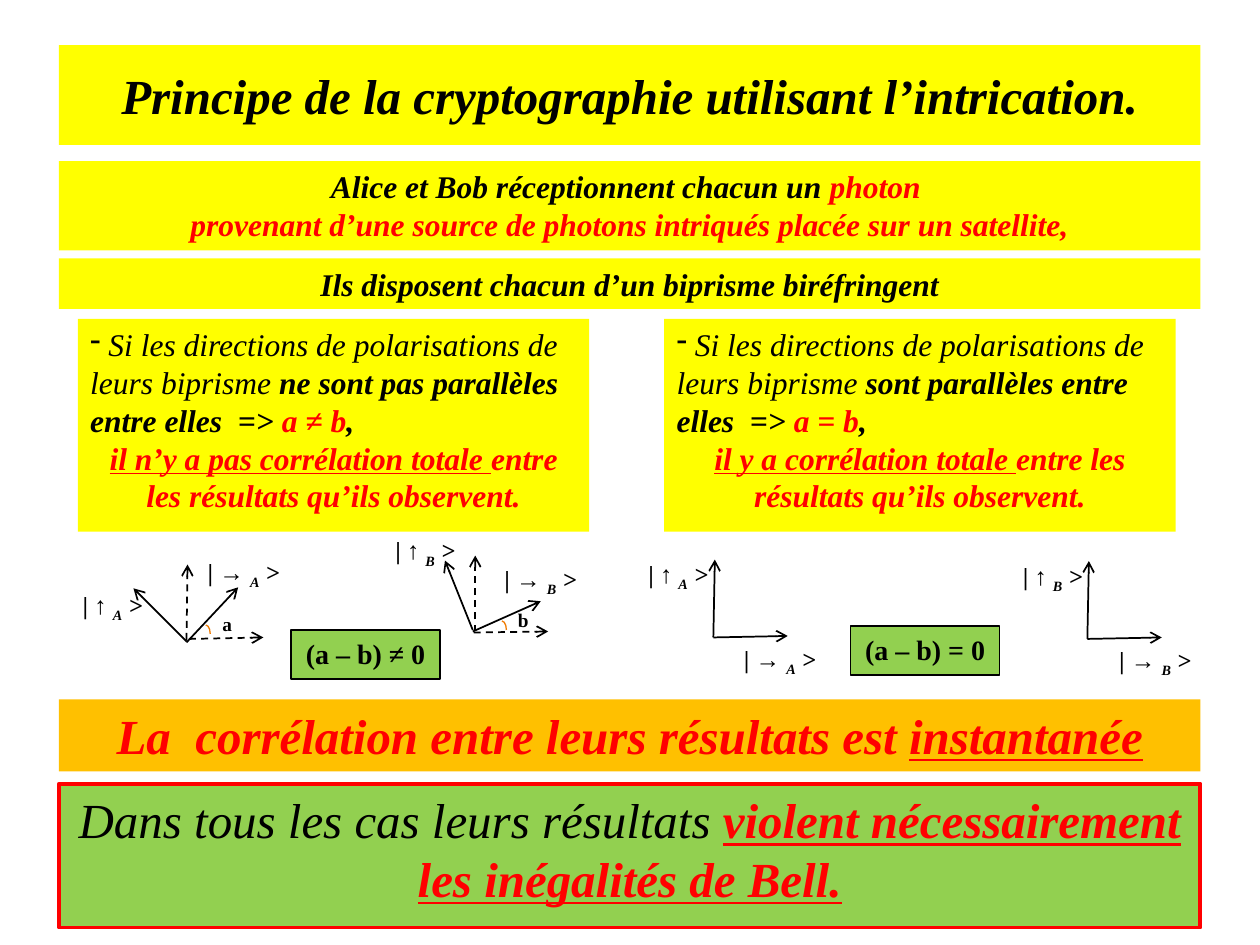
from lxml import etree
from pptx import Presentation
from pptx.dml.color import RGBColor
from pptx.enum.dml import MSO_LINE
from pptx.enum.shapes import MSO_CONNECTOR, MSO_SHAPE
from pptx.enum.text import MSO_ANCHOR, PP_ALIGN
from pptx.oxml.ns import qn
from pptx.util import Cm, Pt

RECTANGLE, ARC = MSO_SHAPE.RECTANGLE, MSO_SHAPE.ARC
STRAIGHT, DASH = MSO_CONNECTOR.STRAIGHT, MSO_LINE.DASH
LEFT, CENTER = PP_ALIGN.LEFT, PP_ALIGN.CENTER
TOP, MIDDLE = MSO_ANCHOR.TOP, MSO_ANCHOR.MIDDLE
FONT = "Times New Roman"
YELLOW, ORANGE, GREEN = "FFFF00", "FFC000", "92D050"
BLACK, RED, ARC_COLOR = "000000", "FF0000", "F07C03"


def paint(color_format, color):
    color_format.rgb = RGBColor.from_string(color)


def add_box(place, size, paragraphs, fill=None, line=None, wrap=True, anchor=TOP):
    """Add a text rectangle; each run is (text, style), with style letters
    b bold, i italic, u underlined, r red, s subscript. A first text of "-"
    makes a left-aligned bullet paragraph. line is (colour, points)."""
    lengths = [Cm(value) for value in place]
    if fill:
        box = page.shapes.add_shape(RECTANGLE, *lengths)
        box.shadow.inherit = False
        box.fill.solid()
        paint(box.fill.fore_color, fill)
        if line:
            paint(box.line.color, line[0])
            box.line.width = Pt(line[1])
        else:
            box.line.fill.background()
    else:
        box = page.shapes.add_textbox(*lengths)
    frame = box.text_frame
    frame.word_wrap = wrap
    frame.vertical_anchor = anchor
    for index, runs in enumerate(paragraphs):
        para = frame.add_paragraph() if index else frame.paragraphs[0]
        para.font.name, para.font.size = FONT, Pt(size)
        para.alignment = CENTER
        if runs[0] == "-":
            para.alignment = LEFT
            bullet = etree.Element(qn("a:buChar"), char="-")
            para._p.get_or_add_pPr().insert(0, bullet)
            runs = runs[1:]
        for text, style in runs:
            span = para.add_run()
            span.text = text
            span.font.bold = "b" in style
            span.font.italic = "i" in style
            span.font.underline = "u" in style
            paint(span.font.color, RED if "r" in style else BLACK)
            if "s" in style:
                span._r.get_or_add_rPr().set("baseline", "-25000")


deck = Presentation()
deck.slide_width, deck.slide_height = Cm(25.4), Cm(19.05)
page = deck.slides.add_slide(deck.slide_layouts[6])

# Full-width bands: top, height, text size, fill, line, anchor, paragraphs
bands = [
    (0.91, 2.01, 28, YELLOW, None, MIDDLE,
     [[("Principe de la cryptographie utilisant l’intrication.", "bi")]]),
    (3.25, 1.8, 18, YELLOW, None, TOP,
     [[("Alice et Bob réceptionnent chacun un ", "bi"), ("photon ", "bir")],
      [("provenant d’une source de photons intriqués placée sur un satellite,", "bir")]]),
    (5.21, 1.02, 18, YELLOW, None, TOP,
     [[("Ils disposent chacun d’un biprisme biréfringent", "bi")]]),
    (14.1, 1.45, 28, ORANGE, None, TOP,
     [[("La  corrélation entre leurs résultats est ", "bir"), ("instantanée", "biru")]]),
    (15.8, 2.9, 28, GREEN, (RED, 2.25), TOP,
     [[("Dans tous les cas leurs résultats ", "i"),
       ("violent nécessairement les inégalités de Bell.", "biru")]]),
]
for top, height, size, fill, line, anchor, paragraphs in bands:
    add_box((1.19, top, 23.01, height), size, paragraphs, fill, line, anchor=anchor)

# The two cases: panel left, condition, relation, conclusion, tag place
cases = [
    (1.57, "ne sont pas parallèles entre elles  => ", "≠",
     "il n’y a pas corrélation totale ", (5.87, 12.7)),
    (13.39, "sont parallèles entre elles  => ", "=",
     "il y a corrélation totale ", (17.15, 12.62)),
]
for left, condition, relation, conclusion, tag_place in cases:
    add_box((left, 6.43, 10.31, 4.29), 18, [
        ["-", (" Si les directions de polarisations de leurs biprisme ", "i"),
         (condition, "bi"), (f"a {relation} b", "bir"), (",", "bi")],
        [(conclusion, "biru"), ("entre les résultats qu’ils observent.", "bir")],
    ], YELLOW)
    add_box((*tag_place, 3, 0.99), 16, [[(f"(a – b) {relation} 0", "b")]],
            GREEN, (BLACK, 0.75), wrap=False)

# Polarisation axes: start, end, dashed
axes = [
    ((3.76, 12.95), (4.8, 11.84), False),
    ((3.76, 12.93), (2.69, 11.86), False),
    ((3.76, 12.9), (3.78, 11.38), True),
    ((3.81, 12.88), (5.31, 12.85), True),
    ((9.53, 12.73), (10.9, 12.12), False),
    ((9.53, 12.7), (8.97, 11.3), False),
    ((9.58, 12.73), (9.58, 11.2), True),
    ((9.55, 12.75), (11.05, 12.73), True),
]
for x, y in [(14.38, 12.85), (21.92, 12.88)]:
    axes.append(((x, y), (x + 1.5, y - 0.03), False))
    axes.append(((x, y), (x + 0.03, y - 1.57), False))
for start, end, dashed in axes:
    axis = page.shapes.add_connector(STRAIGHT, *[Cm(value) for value in start + end])
    paint(axis.line.color, BLACK)
    axis.line.width = Pt(1)
    if dashed:
        axis.line.dash_style = DASH
    etree.SubElement(axis.line._get_or_add_ln(), qn("a:tailEnd"), type="arrow")
    etree.SubElement(axis._element.spPr, qn("a:effectLst"))

# State labels: left, top, width, arrow, observer
kets = [
    (1.4, 11.76, 1.75, "↑", "A"), (3.71, 11.1, 2.41, "→", "A"),
    (7.7, 10.67, 1.75, "↑", "B"), (9.78, 11.25, 2.24, "→", "B"),
    (12.8, 11.15, 1.75, "↑", "A"), (14.58, 12.85, 2.29, "→", "A"),
    (20.35, 11.18, 1.75, "↑", "B"), (22.12, 12.88, 2.34, "→", "B"),
]
for left, top, width, arrow, observer in kets:
    add_box((left, top, width, 0.88), 14,
            [[("|", "bi"), (f" {arrow} ", "b"), (observer, "bis"), (" >", "bi")]],
            wrap=False)

# Angles, each with its arc and letter
for letter, left, top in [("a", 4.06, 12.6), ("b", 10.03, 12.52)]:
    add_box((left - 0.38, top - 0.38, 1.8, 0.74), 11, [[(letter, "b")]])
    arc = page.shapes.add_shape(ARC, Cm(left), Cm(top), Cm(0.18), Cm(0.36))
    arc.shadow.inherit = False
    arc.fill.background()
    paint(arc.line.color, ARC_COLOR)
    arc.line.width = Pt(0.75)

deck.save("out.pptx")
